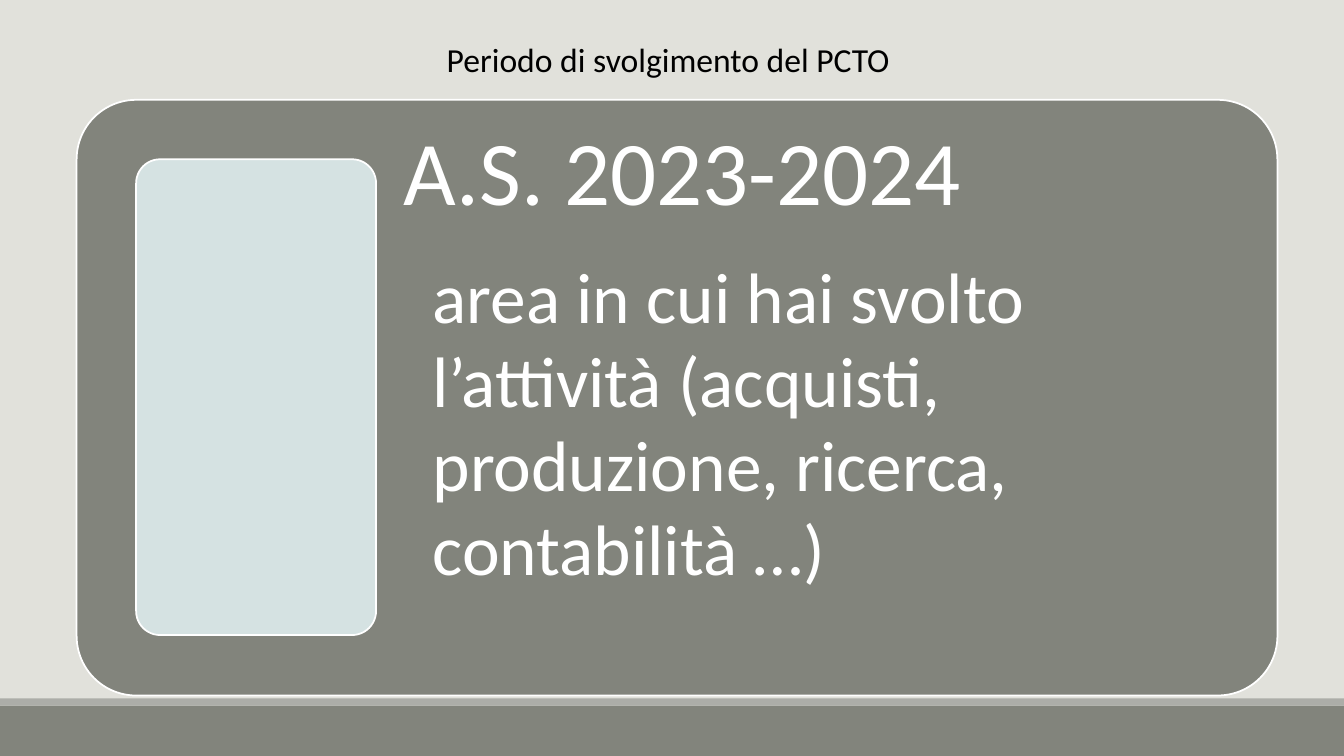
"""Build the slide on the period of the PCTO."""
import pptx
import pptx.dml.color
import pptx.enum.shapes
import pptx.enum.text
import pptx.util
from pptx.dml.color import RGBColor
from pptx.util import Inches

PAPER = RGBColor(0xE1, 0xE1, 0xDB)
OLIVE = RGBColor(0x82, 0x84, 0x7C)
SILVER = RGBColor(0xAC, 0xAD, 0xA8)
MIST = RGBColor(0xD5, 0xE2, 0xE2)
WHITE = RGBColor(0xFF, 0xFF, 0xFF)
BLACK = RGBColor(0, 0, 0)
SHAPE = pptx.enum.shapes.MSO_SHAPE
ALIGN = pptx.enum.text.PP_ALIGN
WIDTH, HEIGHT = 13.33, 7.5


def add_box(shapes, kind, area, fill, line=None):
    """Add a filled shape, outlined if a line colour is given."""
    box = shapes.add_shape(kind, *map(Inches, area))
    box.shadow.inherit = False
    box.fill.solid()
    box.fill.fore_color.rgb = fill
    if line is None:
        box.line.fill.background()
    else:
        box.line.color.rgb = line
        box.line.width = pptx.util.Pt(1.25)
    return box


def add_card(shapes, area, fill):
    """Add a rounded card with a white outline."""
    card = add_box(shapes, SHAPE.ROUNDED_RECTANGLE, area, fill, WHITE)
    card.adjustments[0] = 0.1


def add_frame(shapes, area, inset=None):
    """Add a wrapping text box and return its text frame."""
    frame = shapes.add_textbox(*map(Inches, area)).text_frame
    frame.word_wrap = True
    if inset is not None:
        frame.margin_left = frame.margin_right = Inches(inset)
        frame.margin_top = frame.margin_bottom = Inches(inset)
    return frame


def write(para, text, size, color, align=ALIGN.LEFT, pitch=1.0, after=0, indent=0):
    """Write formatted text into a paragraph."""
    para.alignment = align
    para.line_spacing = pitch
    para.space_after = pptx.util.Pt(after)
    if indent:
        para._p.get_or_add_pPr().set("marL", str(Inches(indent)))
    run = para.add_run()
    run.text = text
    run.font.name = "Calibri"
    run.font.size = pptx.util.Pt(size)
    run.font.color.rgb = color


def add_period(slide):
    """Add the grouped card with the school year and the work area."""
    shapes = slide.shapes.add_group_shape().shapes
    add_card(shapes, (0.76, 0.99, 11.91, 5.91), OLIVE)
    frame = add_frame(shapes, (3.73, 0.99, 8.93, 5.91), inset=0.27)
    write(frame.paragraphs[0], "A.S. 2023-2024", 65, WHITE, pitch=0.9, after=22)
    write(frame.add_paragraph(),
          "area in cui hai svolto l’attività (acquisti, produzione, ricerca, contabilità …)",
          51, WHITE, pitch=0.98, indent=0.29)
    add_card(shapes, (1.35, 1.58, 2.38, 4.72), MIST)


def main():
    """Build and save the slide."""
    deck = pptx.Presentation()
    deck.slide_width, deck.slide_height = Inches(WIDTH), Inches(HEIGHT)
    slide = deck.slides.add_slide(deck.slide_layouts[6])
    slide.background.fill.solid()
    slide.background.fill.fore_color.rgb = PAPER
    for top, tall, fill in ((7, 0.5, OLIVE), (6.93, 0.07, SILVER)):
        add_box(slide.shapes, SHAPE.RECTANGLE, (0, top, WIDTH, tall), fill)
    add_period(slide)
    title = add_frame(slide.shapes, (3.49, 0.34, 6.35, 0.5))
    title.auto_size = pptx.enum.text.MSO_AUTO_SIZE.SHAPE_TO_FIT_TEXT
    write(title.paragraphs[0], "Periodo di svolgimento del PCTO ", 24, BLACK,
          align=ALIGN.CENTER)
    deck.save("out.pptx")


if __name__ == "__main__":
    main()
